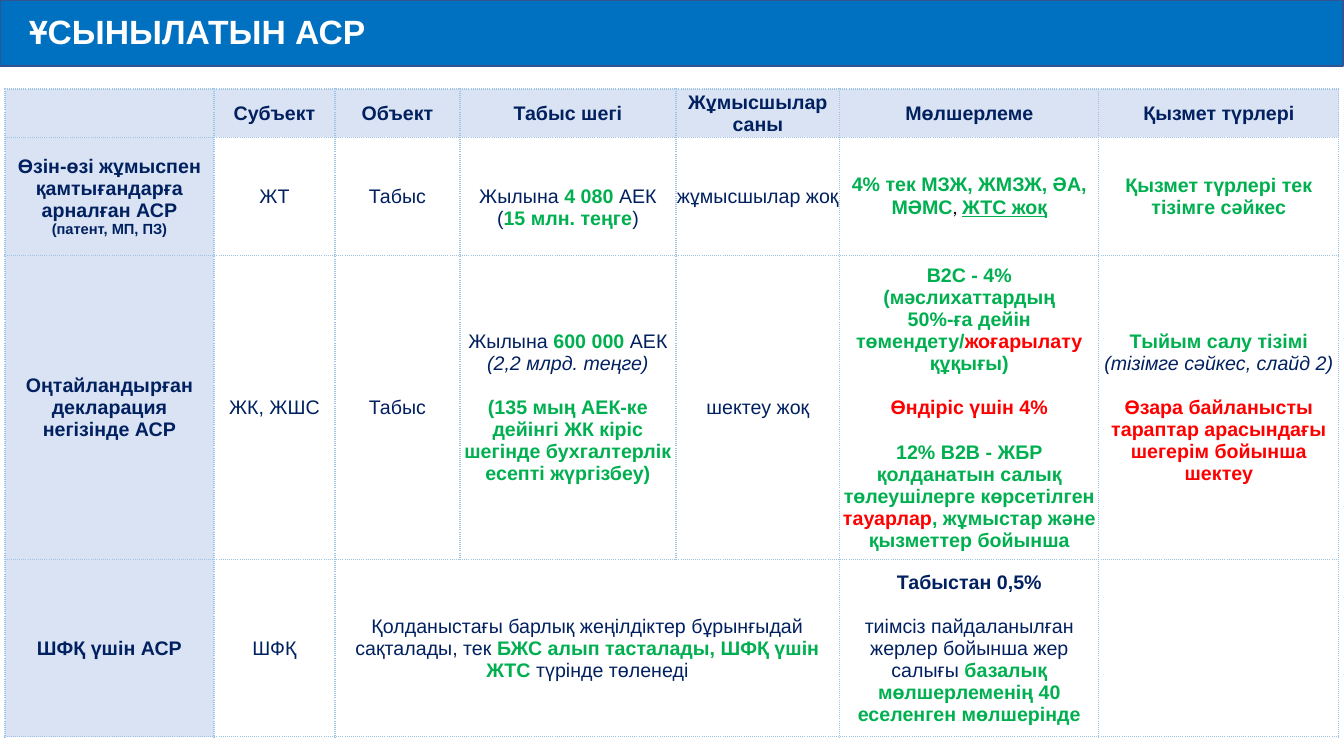
from dataclasses import dataclass

from lxml.etree import SubElement
from pptx import Presentation
from pptx.dml.color import RGBColor as Rgb
from pptx.enum.shapes import MSO_SHAPE as Shape
from pptx.enum.text import MSO_ANCHOR as Anchor, PP_ALIGN as Align
from pptx.oxml.ns import qn
from pptx.util import Emu, Pt

SCALE = 914400 / 100.8


@dataclass(frozen=True)
class Theme:
    """Colours, type sizes and fonts of the slide."""
    navy: str = "002060"
    green: str = "00B050"
    red: str = "FF0000"
    white: str = "FFFFFF"
    black: str = "000000"
    grey: str = "8C8C8C"
    band: str = "0070C0"
    band_line: str = "325491"
    head: str = "DAE3F3"
    border: str = "9DC3E6"
    title_size: float = 24
    body_size: float = 14
    number_size: float = 12
    note_size: float = 10.5
    gap: float = 16
    font: str = "Arial"
    number_font: str = "Calibri"


THEME = Theme()
BODY = {"name": THEME.font, "size": Pt(THEME.body_size), "color": THEME.navy}
BOLD = BODY | {"bold": True}
STYLES = {
    "plain": BODY,
    "bold": BOLD,
    "italic": BODY | {"italic": True},
    "note": BOLD | {"size": Pt(THEME.note_size)},
    "green": BOLD | {"color": THEME.green},
    "red": BOLD | {"color": THEME.red},
    "underlined": BOLD | {"color": THEME.green, "underline": True},
    "comma": BODY | {"name": THEME.number_font, "color": THEME.black},
    "title": BOLD | {"size": Pt(THEME.title_size), "color": THEME.white},
    "number": {"name": THEME.number_font, "size": Pt(THEME.number_size), "color": THEME.grey},
}


def near(*runs):
    """Describe a paragraph that follows directly."""
    return 0, runs


def apart(*runs):
    """Describe a paragraph set one line lower."""
    return THEME.gap, runs


def one(style, text):
    """Describe a cell with a single run."""
    return [near((style, text))]


COLUMNS = [209, 121, 125, 216, 164, 259, 240]
ROWS = [48, 118, 253, 177]
HEADINGS = ["Субъект", "Объект", "Табыс шегі", "Жұмысшылар саны", "Мөлшерлеме", "Қызмет түрлері"]
CELLS = [
    [[]] + [one("bold", heading) for heading in HEADINGS],
    [
        [near(("bold", "Өзін-өзі жұмыспен қамтығандарға арналған АСР")),
         near(("note", "(патент, МП, ПЗ)"))],
        one("plain", "ЖТ"),
        one("plain", "Табыс"),
        [near(("plain", "Жылына "), ("green", "4 080 "), ("plain", "АЕК\n("),
              ("green", "15 млн. теңге"), ("plain", ")"))],
        one("plain", "жұмысшылар жоқ"),
        [near(("green", "4% тек МЗЖ, ЖМЗЖ, ӘА, МӘМС"), ("comma", ", "), ("underlined", "ЖТС жоқ"))],
        one("green", "Қызмет түрлері тек тізімге сәйкес"),
    ],
    [
        one("bold", "Оңтайландырған декларация негізінде АСР"),
        one("plain", "ЖК, ЖШС"),
        one("plain", "Табыс"),
        [near(("plain", "Жылына "), ("green", "600 000 "), ("plain", "АЕК "),
              ("italic", "(2,2 млрд. теңге)")),
         apart(("green", "(135 мың АЕК-ке дейінгі ЖК кіріс шегінде бухгалтерлік есепті жүргізбеу)"))],
        one("plain", "шектеу жоқ"),
        [near(("green", "В2С - 4%")),
         near(("green", "(мәслихаттардың\n50%-ға дейін төмендету/"), ("red", "жоғарылату "),
              ("green", "құқығы)")),
         apart(("red", "Өндіріс үшін 4%")),
         apart(("green", "12% В2В - ЖБР қолданатын салық төлеушілерге көрсетілген "),
               ("red", "тауарлар"), ("green", ", жұмыстар және қызметтер бойынша"))],
        [near(("green", "Тыйым салу тізімі "), ("italic", "(тізімге сәйкес, слайд 2)")),
         apart(("red", "Өзара байланысты тараптар арасындағы шегерім бойынша шектеу"))],
    ],
    [
        one("bold", "ШФҚ үшін АСР"),
        one("plain", "ШФҚ"),
        [near(("plain", "Қолданыстағы барлық жеңілдіктер бұрынғыдай сақталады, тек "),
              ("green", "БЖС алып тасталады, ШФҚ үшін ЖТС "), ("plain", "түрінде төленеді"))],
        [],
        [],
        [near(("bold", "Табыстан 0,5%")),
         apart(("plain", "тиімсіз пайдаланылған жерлер бойынша жер салығы "),
               ("green", "базалық мөлшерлеменің 40 еселенген мөлшерінде"))],
        [],
    ],
]


def px(length):
    """Turn pixels into EMU."""
    return Emu(round(length * SCALE))


def add_span(para, style, text):
    """Add formatted text, with line breaks, to a paragraph."""
    for index, line in enumerate(text.split("\n")):
        if index:
            para.add_line_break()
        span = para.add_run()
        span.text = line
        for key, value in STYLES[style].items():
            if key == "color":
                span.font.color.rgb = Rgb.from_string(value)
            else:
                setattr(span.font, key, value)


def fill_frame(frame, paragraphs, align):
    """Write described paragraphs into a text frame."""
    for index, (space, runs) in enumerate(paragraphs):
        para = frame.add_paragraph() if index else frame.paragraphs[0]
        para.alignment = align
        if space:
            para.space_before = Pt(space)
        for style, text in runs:
            add_span(para, style, text)


def add_label(page, place, style, text, align, left_inset=10):
    """Add a one-line text box and return its paragraph."""
    frame = page.shapes.add_textbox(*map(px, place)).text_frame
    frame.word_wrap = True
    frame.vertical_anchor = Anchor.MIDDLE
    frame.margin_left = px(left_inset)
    fill_frame(frame, one(style, text), align)
    return frame.paragraphs[0]


def add_band(page, place):
    """Add the title band."""
    band = page.shapes.add_shape(Shape.RECTANGLE, *map(px, place))
    band.shadow.inherit = False
    band.fill.solid()
    band.fill.fore_color.rgb = Rgb.from_string(THEME.band)
    band.line.color.rgb = Rgb.from_string(THEME.band_line)
    band.line.width = Pt(1)


def add_borders(cell):
    """Give a cell dotted borders on all sides."""
    properties = cell._tc.get_or_add_tcPr()
    for side in ("a:lnL", "a:lnR", "a:lnT", "a:lnB"):
        line = SubElement(properties, qn(side), w=str(Pt(1)))
        SubElement(SubElement(line, qn("a:solidFill")), qn("a:srgbClr"), val=THEME.border)
        SubElement(line, qn("a:prstDash"), val="sysDot")


def style_cell(cell, fill):
    """Set borders, fill, insets and anchor of a cell."""
    add_borders(cell)
    cell.fill.solid()
    cell.fill.fore_color.rgb = Rgb.from_string(fill)
    cell.vertical_anchor = Anchor.MIDDLE
    for side, inset in {"left": 1, "right": 1, "top": 1, "bottom": 0}.items():
        setattr(cell, f"margin_{side}", px(inset))


def add_regime_table(page, left, top):
    """Add the table of tax regimes."""
    place = (left, top, sum(COLUMNS), sum(ROWS))
    table = page.shapes.add_table(len(ROWS), len(COLUMNS), *map(px, place)).table
    table.first_row = table.horz_banding = False
    for column, width in zip(table.columns, COLUMNS):
        column.width = px(width)
    for row_index, (row, height) in enumerate(zip(table.rows, ROWS)):
        row.height = px(height)
        for column_index, cell in enumerate(row.cells):
            is_head = row_index == 0 or column_index == 0
            style_cell(cell, THEME.head if is_head else THEME.white)
            fill_frame(cell.text_frame, CELLS[row_index][column_index], Align.CENTER)
    table.cell(1, 3).margin_top = px(23)
    table.cell(3, 2).merge(table.cell(3, 4))


def main():
    """Build and save the slide."""
    deck = Presentation()
    deck.slide_width, deck.slide_height = px(1344), px(756)
    page = deck.slides.add_slide(deck.slide_layouts[6])
    add_label(page, (1031, 699, 302, 40), "number", "10", Align.RIGHT)
    add_band(page, (0, 0, 1343, 66))
    title = add_label(page, (0, 3, 1343, 62), "title", "ҰСЫНЫЛАТЫН АСР", Align.LEFT, 29)
    title.line_spacing = 0.9
    add_regime_table(page, 5, 89)
    deck.save("out.pptx")


if __name__ == "__main__":
    main()
